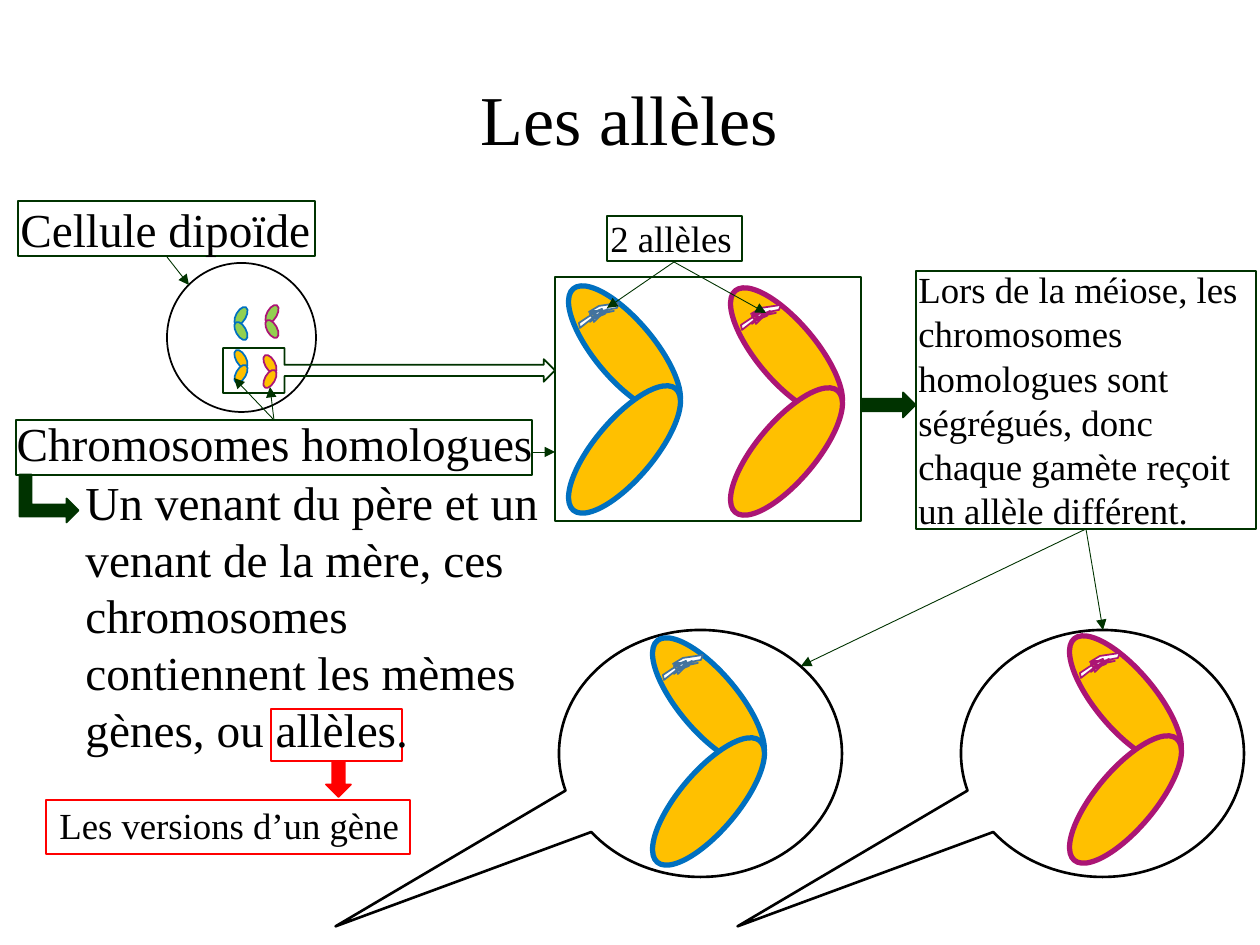
from dataclasses import dataclass

from lxml import etree
from pptx import Presentation
from pptx.dml.color import RGBColor
from pptx.enum.shapes import MSO_CONNECTOR, MSO_SHAPE
from pptx.enum.text import MSO_ANCHOR, PP_ALIGN
from pptx.oxml.ns import qn
from pptx.util import Emu, Pt

RECTANGLE = MSO_SHAPE.RECTANGLE
ELLIPSE = MSO_SHAPE.OVAL
DOWN_ARROW = MSO_SHAPE.DOWN_ARROW
BENT_ARROW = MSO_SHAPE.BENT_UP_ARROW
ARROW_CALLOUT = MSO_SHAPE.RIGHT_ARROW_CALLOUT
ELLIPSE_CALLOUT = MSO_SHAPE.OVAL_CALLOUT
STRAIGHT = MSO_CONNECTOR.STRAIGHT
LEFT = PP_ALIGN.LEFT
CENTER = PP_ALIGN.CENTER
TOP = MSO_ANCHOR.TOP
MIDDLE = MSO_ANCHOR.MIDDLE

SCALE = 914400 / 126


@dataclass(frozen=True)
class Theme:
    font: str = "Times New Roman"
    black: str = "000000"
    white: str = "FFFFFF"
    green: str = "003300"
    red: str = "FF0000"
    lime: str = "92D050"
    gold: str = "FFC000"
    father: str = "0070C0"
    mother: str = "AB1575"
    father_gene: str = "43739E"
    title: int = 40
    body: int = 27
    label: int = 21


THEME = Theme()

GENE_OUTLINE = [
    (18, 8), (14, 15), (11, 11), (23, 6), (24, 11), (20, 14), (15, 19),
    (14, 14), (20, 11), (29, 6), (26, 11), (16, 15), (11, 19), (14, 14),
    (23, 11), (28, 9), (35, 8), (21, 11), (15, 14), (1, 25), (0, 20),
    (9, 14), (18, 9), (38, 5), (40, 0), (20, 3), (10, 9), (15, 8),
]


def px(value):
    return Emu(round(value * SCALE))


def paint(shape, fill, line, width=1):
    shape.shadow.inherit = False
    if fill:
        shape.fill.solid()
        shape.fill.fore_color.rgb = RGBColor.from_string(fill)
    else:
        shape.fill.background()
    shape.line.color.rgb = RGBColor.from_string(line)
    shape.line.width = Pt(width)


def add_figure(page, kind, frame, fill, line, width=1, rotation=0, adjustments=()):
    shape = page.shapes.add_shape(kind, *map(px, frame))
    paint(shape, fill, line, width)
    shape.rotation = rotation
    for index, value in enumerate(adjustments):
        shape.adjustments[index] = value
    return shape


def add_text(page, frame, text, size, align=LEFT, anchor=TOP, wrap=True, spacing=None):
    box = page.shapes.add_textbox(*map(px, frame))
    box.text_frame.word_wrap = wrap
    box.text_frame.vertical_anchor = anchor
    para = box.text_frame.paragraphs[0]
    para.alignment = align
    para.line_spacing = spacing
    span = para.add_run()
    span.text = text
    span.font.name = THEME.font
    span.font.size = Pt(size)
    span.font.color.rgb = RGBColor.from_string(THEME.black)


def add_pointer(page, start, end):
    pointer = page.shapes.add_connector(STRAIGHT, *map(px, start + end))
    pointer.line.color.rgb = RGBColor.from_string(THEME.green)
    pointer.line.width = Pt(0.5)
    etree.SubElement(pointer.line._get_or_add_ln(), qn("a:tailEnd"), type="triangle")
    etree.SubElement(pointer._element.spPr, qn("a:effectLst"))


def add_arms(page, left, top, size, step, angle, fill, line, width):
    for offset, rotation in ((0, angle), (step, -angle)):
        frame = (left, top + offset, *size)
        add_figure(page, ELLIPSE, frame, fill, line, width, rotation)


def add_small_chromosome(page, left, top, angle, fill, line):
    add_arms(page, left, top, (10, 20), 15, angle, fill, line, 1)


def add_large_chromosome(page, left, top, line, gene_line):
    add_arms(page, left, top, (59, 159), 100, -40.1, THEME.gold, line, 3)
    builder = page.shapes.build_freeform(*GENE_OUTLINE[0], scale=SCALE)
    builder.add_line_segments(GENE_OUTLINE[1:], close=True)
    gene = builder.convert_to_shape(px(left - 16), px(top + 33))
    paint(gene, THEME.white, gene_line)


def add_frames(page):
    for frame in (
        (916, 271, 340, 258),
        (555, 277, 306, 244),
        (607, 216, 135, 45),
        (18, 201, 297, 55),
        (16, 420, 516, 55),
    ):
        add_figure(page, RECTANGLE, frame, THEME.white, THEME.green)
    for frame in ((46, 800, 364, 54), (271, 709, 131, 52)):
        add_figure(page, RECTANGLE, frame, THEME.white, THEME.red)


def add_cell(page):
    add_figure(page, ELLIPSE, (167, 263, 149, 149), THEME.white, THEME.black)
    add_small_chromosome(page, 236, 306, 29.5, THEME.lime, THEME.father)
    add_small_chromosome(page, 267, 304, 29.5, THEME.lime, THEME.mother)
    add_figure(page, ARROW_CALLOUT, (223, 348, 332, 45), None, THEME.green,
               adjustments=(0.25, 0.25, 0.25, 0.185))
    add_small_chromosome(page, 236, 349, -29.5, THEME.gold, THEME.father)
    add_small_chromosome(page, 265, 354, -29.5, THEME.gold, THEME.mother)


def add_pairs(page):
    for left in (559, 961):
        add_figure(page, ELLIPSE_CALLOUT, (left, 630, 283, 247), THEME.white,
                   THEME.black, 1.5, adjustments=(-1.29, 0.7))
    for left, top in ((595, 270), (679, 622)):
        add_large_chromosome(page, left, top, THEME.father, THEME.father_gene)
    for left, top in ((757, 272), (1096, 620)):
        add_large_chromosome(page, left, top, THEME.mother, THEME.mother)


def add_arrows(page):
    add_figure(page, BENT_ARROW, (25, 469, 48, 59), THEME.green, THEME.green, rotation=90)
    add_figure(page, DOWN_ARROW, (876, 378, 25, 54), THEME.green, THEME.green, rotation=270)
    add_figure(page, DOWN_ARROW, (326, 762, 25, 35), THEME.red, THEME.red)
    for start, end in (
        ((167, 257), (189, 285)),
        ((274, 420), (270, 387)),
        ((274, 420), (234, 378)),
        ((674, 262), (607, 308)),
        ((674, 262), (766, 313)),
        ((1086, 529), (801, 666)),
        ((1086, 529), (1103, 630)),
        ((532, 452), (555, 452)),
    ):
        add_pointer(page, start, end)


def add_texts(page):
    add_text(page, (55, 50, 1149, 145), "Les allèles", THEME.title, CENTER, MIDDLE, spacing=0.9)
    add_text(page, (8, 194, 319, 71), "Cellule dipoïde", THEME.body, wrap=False)
    add_text(page, (1, 408, 547, 71), "Chromosomes homologues", THEME.body, CENTER, wrap=False)
    add_text(page, (73, 467, 503, 299),
             "Un venant du père et un venant de la mère, ces chromosomes "
             "contiennent les mèmes gènes, ou allèles.", THEME.body)
    add_text(page, (598, 210, 151, 57), "2 allèles", THEME.label)
    add_text(page, (906, 261, 353, 280),
             "Lors de la méiose, les chromosomes homologues sont ségrégués, "
             "donc chaque gamète reçoit un allèle différent.", THEME.label)
    add_text(page, (47, 797, 454, 57), "Les versions d’un gène", THEME.label)


def main():
    deck = Presentation()
    deck.slide_width = px(1260)
    deck.slide_height = px(945)
    page = deck.slides.add_slide(deck.slide_layouts[6])
    add_frames(page)
    add_cell(page)
    add_pairs(page)
    add_arrows(page)
    add_texts(page)
    deck.save("out.pptx")


if __name__ == "__main__":
    main()
